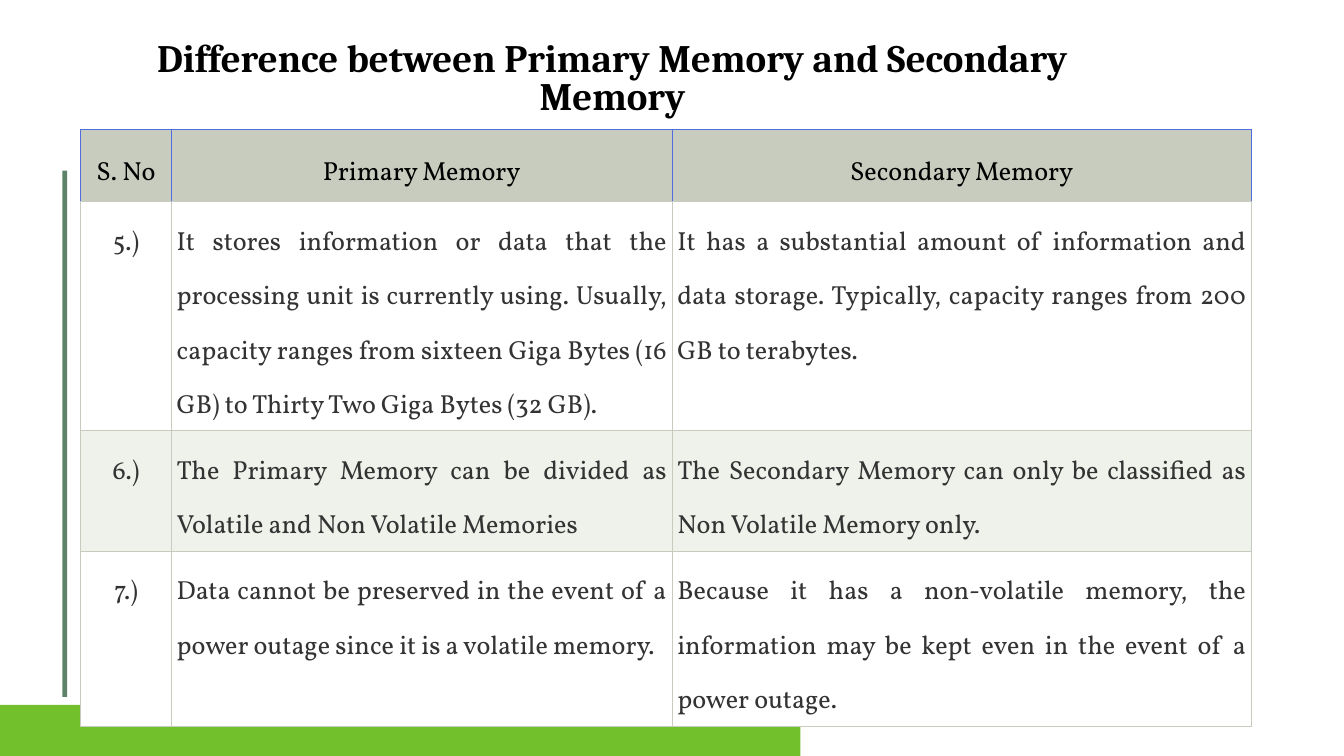
"""Build a slide that compares primary and secondary memory in a table."""
from dataclasses import dataclass

import lxml.etree
import pptx
import pptx.dml.color
import pptx.enum.shapes
import pptx.enum.text
import pptx.oxml.ns
import pptx.util

COLUMNS, ROWS = 20, 11.25
CELL = pptx.util.Inches(1)
ALIGN = pptx.enum.text.PP_ALIGN
SAGE, BLUE = "C7CCBE", "506CDD"
COLUMN_SPANS = (1.35, 7.45, 8.62)


@dataclass(frozen=True)
class Area:
    """Hold a place on the page in grid columns and rows."""
    left: float
    top: float
    width: float
    height: float

    def lengths(self) -> tuple[int, ...]:
        """Return the place as slide lengths."""
        return tuple(grid(n) for n in (self.left, self.top, self.width, self.height))


@dataclass(frozen=True)
class CellStyle:
    """Hold the look shared by the cells of one kind of row."""
    ink: str
    margin: float
    body_align: ALIGN
    borders: tuple[str, str, str, str]


@dataclass(frozen=True)
class TableRow:
    """Hold the wording, height and look of one table row."""
    texts: tuple[str, str, str]
    height: float
    fill: str
    style: CellStyle


HEADER = CellStyle("000000", 0.12, ALIGN.CENTER, (BLUE, BLUE, BLUE, SAGE))
BODY = CellStyle("333333", 0.08, ALIGN.JUSTIFY, (SAGE,) * 4)

TABLE_ROWS = (
    TableRow(("S. No", "Primary Memory", "Secondary Memory"), 1.07, SAGE, HEADER),
    TableRow((
        "5.)",
        "It stores information or data that the processing unit is currently using. "
        "Usually, capacity ranges from sixteen Giga Bytes (16 GB) to Thirty Two Giga "
        "Bytes (32 GB).",
        "It has a substantial amount of information and data storage. Typically, "
        "capacity ranges from 200 GB to terabytes.",
    ), 3.41, "FFFFFF", BODY),
    TableRow((
        "6.)",
        "The Primary Memory can be divided as Volatile and Non Volatile Memories",
        "The Secondary Memory can only be classified as Non Volatile Memory only.",
    ), 1.79, "EFF1EB", BODY),
    TableRow((
        "7.)",
        "Data cannot be preserved in the event of a power outage since it is a "
        "volatile memory.",
        "Because it has a non-volatile memory, the information may be kept even in "
        "the event of a power outage.",
    ), 2.61, "FFFFFF", BODY),
)


def grid(count: float) -> int:
    """Return the length of a count of grid cells."""
    return round(count * CELL)


def color(value: str) -> pptx.dml.color.RGBColor:
    """Return the colour for a hex string."""
    return pptx.dml.color.RGBColor.from_string(value)


def write(para, text: str, font: str, size: float, ink: str, align: ALIGN,
          spacing: float, bold: bool = False) -> None:
    """Fill a paragraph with text in one font."""
    para.text = text
    para.alignment = align
    para.line_spacing = spacing
    para.font.name = font
    para.font.size = pptx.util.Pt(size)
    para.font.bold = bold
    para.font.color.rgb = color(ink)


def draw_bar(page, area: Area, fill: str) -> None:
    """Draw a plain filled bar."""
    bar = page.shapes.add_shape(
        pptx.enum.shapes.MSO_SHAPE.RECTANGLE, *area.lengths())
    bar.shadow.inherit = False
    bar.fill.solid()
    bar.fill.fore_color.rgb = color(fill)
    bar.line.fill.background()


def draw_title(page, area: Area, text: str) -> None:
    """Draw the centred title."""
    box = page.shapes.add_textbox(*area.lengths())
    box.text_frame.word_wrap = True
    write(box.text_frame.paragraphs[0], text, "Cambria", 41.6, "000000",
          ALIGN.CENTER, 0.8, bold=True)


def set_borders(cell, colors: tuple[str, str, str, str]) -> None:
    """Set the left, right, top and bottom borders of a cell."""
    properties = cell._tc.get_or_add_tcPr()
    for index, (side, value) in enumerate(zip("LRTB", colors)):
        line = lxml.etree.Element(
            pptx.oxml.ns.qn(f"a:ln{side}"), w=str(pptx.util.Pt(0.75)))
        fill = lxml.etree.SubElement(line, pptx.oxml.ns.qn("a:solidFill"))
        lxml.etree.SubElement(fill, pptx.oxml.ns.qn("a:srgbClr"), val=value)
        properties.insert(index, line)


def draw_table(page, left: float, top: float, rows: tuple[TableRow, ...]) -> None:
    """Draw the comparison table."""
    area = Area(left, top, sum(COLUMN_SPANS), sum(row.height for row in rows))
    table = page.shapes.add_table(
        len(rows), len(COLUMN_SPANS), *area.lengths()).table
    table.first_row = table.horz_banding = False
    for column, span in zip(table.columns, COLUMN_SPANS):
        column.width = grid(span)
    for table_row, row in zip(table.rows, rows):
        table_row.height = grid(row.height)
        style = row.style
        for index, (cell, text) in enumerate(zip(table_row.cells, row.texts)):
            cell.margin_left = cell.margin_right = grid(style.margin)
            cell.margin_top = cell.margin_bottom = grid(style.margin)
            cell.fill.solid()
            cell.fill.fore_color.rgb = color(row.fill)
            set_borders(cell, style.borders)
            align = style.body_align if index else ALIGN.CENTER
            write(cell.text_frame.paragraphs[0], text, "Vollkorn", 28,
                  style.ink, align, 1.5)


def main() -> None:
    """Build and save the deck."""
    deck = pptx.Presentation()
    deck.slide_width, deck.slide_height = grid(COLUMNS), grid(ROWS)
    page = deck.slides.add_slide(deck.slide_layouts[6])
    draw_bar(page, Area(0, ROWS - 0.76, 11.91, 0.76), "72C02C")
    draw_bar(page, Area(0.93, 2.54, 0.07, 7.83), "5F8368")
    draw_title(page, Area(2.03, 0.59, 14.17, 1.25),
               "Difference between Primary Memory and Secondary Memory")
    draw_table(page, 1.2, 1.93, TABLE_ROWS)
    deck.save("out.pptx")


if __name__ == "__main__":
    main()
